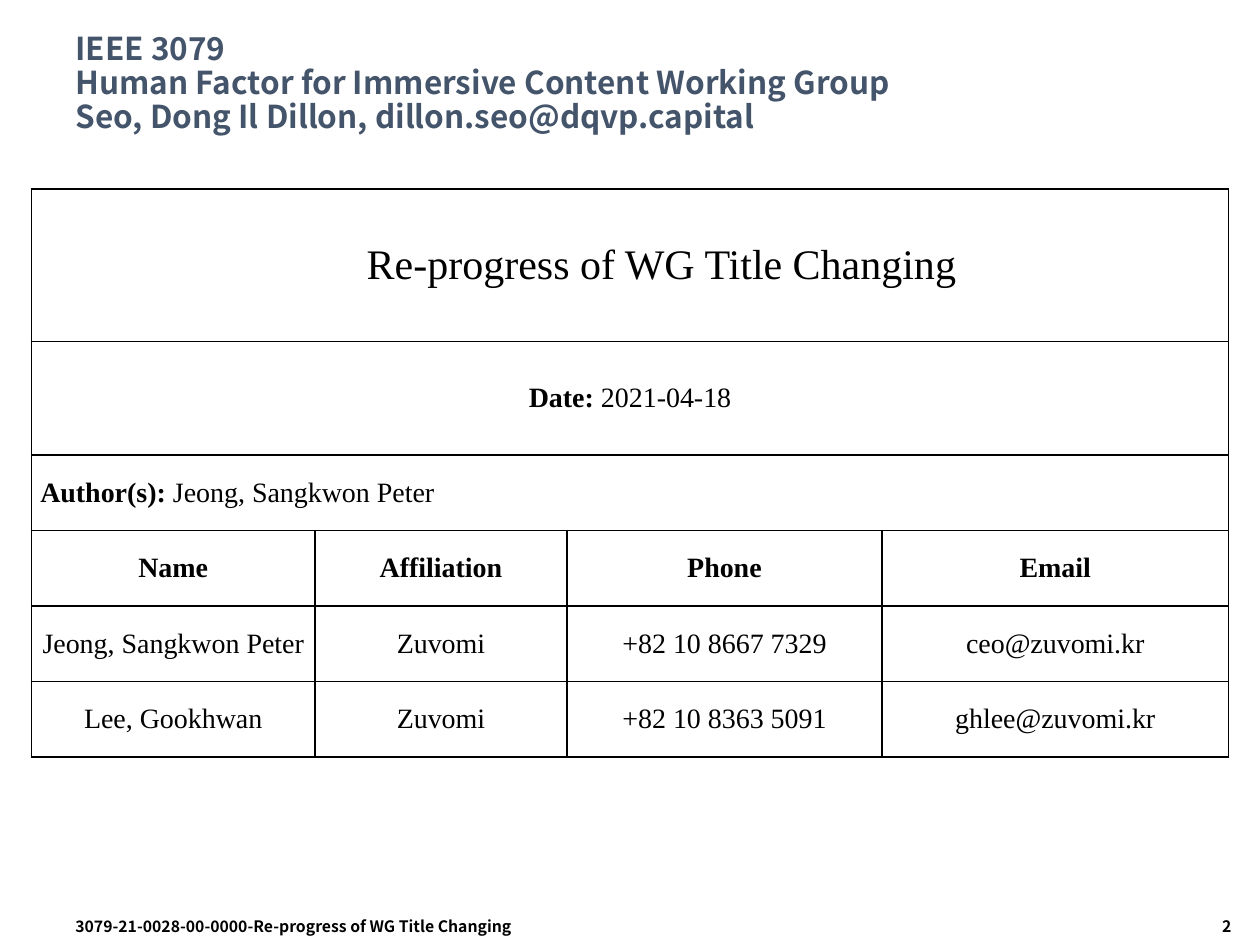
"""Build the cover slide of a working group submission with its author table."""
from lxml.etree import SubElement
from pptx import Presentation
from pptx.dml.color import RGBColor
from pptx.enum.text import MSO_ANCHOR, MSO_AUTO_SIZE, PP_ALIGN
from pptx.oxml import parse_xml
from pptx.oxml.ns import nsdecls
from pptx.util import Inches, Pt

THEME = {
    "head": {"name": "Noto Sans CJK KR", "size": Pt(18), "bold": True, "color": "44546A"},
    "foot": {"name": "Noto Sans CJK KR", "size": Pt(9), "bold": True, "color": "000000"},
    "topic": {"name": "Times New Roman", "size": Pt(24), "bold": False, "color": "000000"},
    "label": {"name": "Times New Roman", "size": Pt(16), "bold": True, "color": "000000"},
    "cell": {"name": "Times New Roman", "size": Pt(16), "bold": False, "color": "000000"},
}
BORDER = "000000"


def style(r, role):
    for key, value in THEME[role].items():
        if key == "color":
            r.font.color.rgb = RGBColor.from_string(value)
        else:
            setattr(r.font, key, value)


def write(p, parts, align):
    p.alignment = align
    for text, role in parts:
        r = p.add_run()
        r.text = text
        style(r, role)


prs = Presentation()
prs.slide_width, prs.slide_height = Inches(10), Inches(7.5)
col, row = prs.slide_width / 40, prs.slide_height / 30
s = prs.slides.add_slide(prs.slide_layouts[5])

title = s.shapes.title
title.left, title.top = int(2 * col), int(0.68 * row)
title.width, title.height = int(36 * col), int(4 * row)
tf = title.text_frame
tf.auto_size, tf.vertical_anchor, tf.word_wrap = MSO_AUTO_SIZE.NONE, MSO_ANCHOR.MIDDLE, True
p = tf.paragraphs[0]
p.text = """IEEE 3079
Human Factor for Immersive Content Working Group
Seo, Dong Il Dillon, dillon.seo@dqvp.capital"""
p.alignment, p.line_spacing = PP_ALIGN.LEFT, 0.9
for r in p.runs:
    style(r, "head")

spans = [
    ([("Re-progress of WG Title Changing", "topic")], PP_ALIGN.CENTER),
    ([("Date: ", "label"), ("2021-04-18", "cell")], PP_ALIGN.CENTER),
    ([("Author(s): ", "label"), ("Jeong, Sangkwon Peter", "cell")], PP_ALIGN.LEFT),
]
authors = [
    ["Name", "Affiliation", "Phone", "Email"],
    ["Jeong, Sangkwon Peter", "Zuvomi", "+82 10 8667 7329", "ceo@zuvomi.kr"],
    ["Lee, Gookhwan", "Zuvomi", "+82 10 8363 5091", "ghlee@zuvomi.kr"],
]
widths, heights = [9, 8, 10, 11], [4.84, 3.6, 2.4, 2.4, 2.4, 2.4]
table = s.shapes.add_table(len(heights), len(widths), int(col), int(6 * row),
                           int(sum(widths) * col), int(sum(heights) * row)).table
table.first_row = table.horz_banding = False
for column, width in zip(table.columns, widths):
    column.width = int(width * col)
for line, height in zip(table.rows, heights):
    line.height = int(height * row)

cell_format = {
    "vertical_anchor": MSO_ANCHOR.MIDDLE,
    "margin_left": Inches(0.07), "margin_right": Inches(0.07),
    "margin_top": 0, "margin_bottom": 0,
}
for cell in table.iter_cells():
    for key, value in cell_format.items():
        setattr(cell, key, value)
    cell.fill.background()
    for i, side in enumerate(("lnL", "lnR", "lnT", "lnB")):
        ln = parse_xml(f'<a:{side} {nsdecls("a")} w="{Pt(1)}"><a:solidFill/></a:{side}>')
        SubElement(ln[0], ln[0].tag.replace("solidFill", "srgbClr"), val=BORDER)
        cell._tc.get_or_add_tcPr().insert(i, ln)

for i, (parts, align) in enumerate(spans):
    table.cell(i, 0).merge(table.cell(i, len(widths) - 1))
    write(table.cell(i, 0).text_frame.paragraphs[0], parts, align)
for i in range(2):
    table.cell(i, 0).text_frame.paragraphs[0].space_after = Pt(12)
table.cell(0, 0).text_frame.paragraphs[0]._p.get_or_add_pPr().set("marL", str(Inches(0.5)))

for i, values in enumerate(authors):
    role = "cell" if i else "label"
    for j, text in enumerate(values):
        p = table.cell(len(spans) + i, j).text_frame.paragraphs[0]
        write(p, [(text, role)], PP_ALIGN.CENTER)

footers = [
    ("2", 33, 6.48, PP_ALIGN.RIGHT),
    ("3079-21-0028-00-0000-Re-progress of WG Title Changing", 2, 17.68, PP_ALIGN.LEFT),
]
for text, left, width, align in footers:
    sp = s.shapes.add_textbox(int(left * col), int(28.92 * row), int(width * col), int(1.08 * row))
    sp.text_frame.word_wrap = True
    write(sp.text_frame.paragraphs[0], [(text, "foot")], align)

prs.save("out.pptx")
